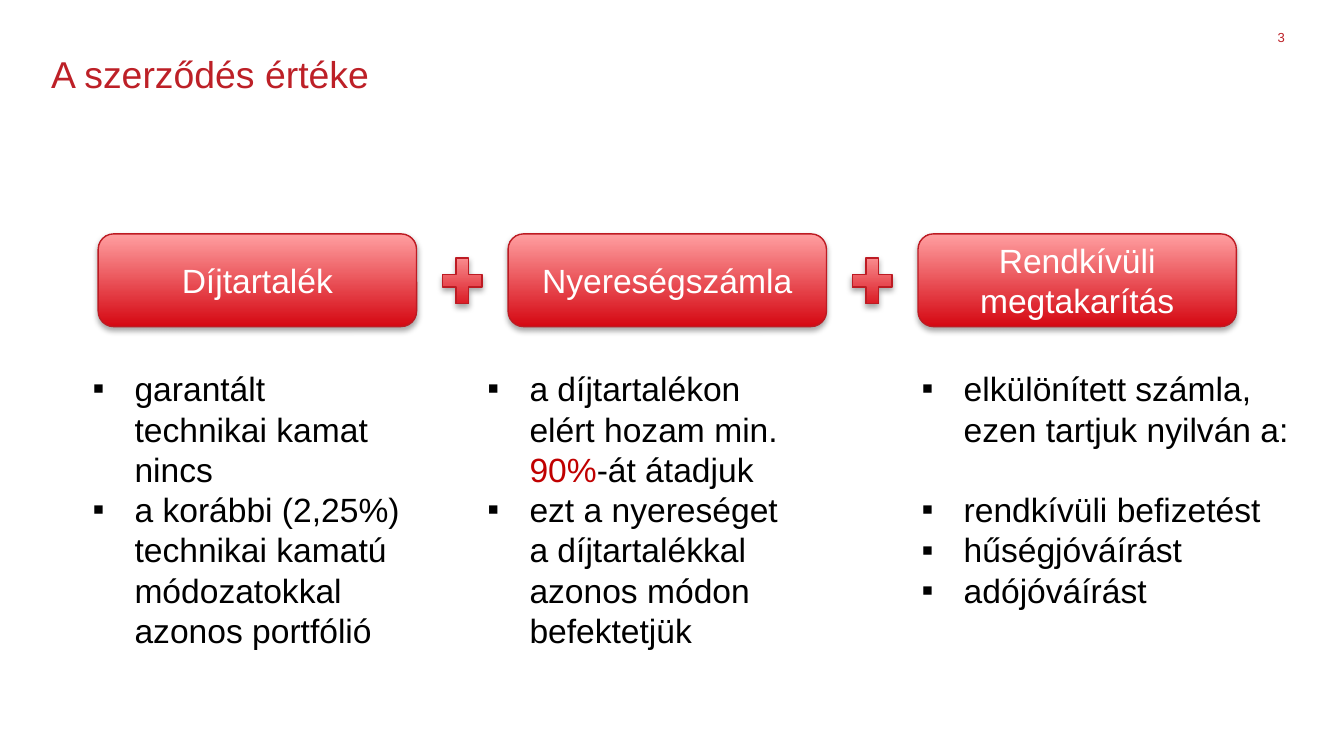
from dataclasses import dataclass

from lxml import etree
from pptx import Presentation
from pptx.dml.color import RGBColor
from pptx.enum import shapes, text
from pptx.oxml import ns
from pptx.util import Pt

COLORS = {
    "title": "BD2027",
    "border": "BD1B23",
    "deep": "D50812",
    "light": "FF9FA1",
    "accent": "C00000",
    "body": "000000",
    "label": "FFFFFF",
    "shadow": "000000",
}
FONT = "Arial"
PITCH = 219.6
INDENT = 22.5


@dataclass
class Box:
    left: float
    top: float
    width: float
    height: float


@dataclass
class Bullet:
    phrases: tuple[str, ...]
    gap: float = 0


@dataclass
class Component:
    name: str
    details: Box
    bullets: list[Bullet]


COMPONENTS = [
    Component("Díjtartalék", Box(42.5, 193.7, 180.7, 160), [
        Bullet(("garantált technikai kamat nincs",)),
        Bullet(("a korábbi (2,25%) technikai kamatú módozatokkal azonos portfólió",)),
    ]),
    Component("Nyereségszámla", Box(254.1, 193.7, 170.6, 160), [
        Bullet(("a díjtartalékon elért hozam min. ", "90%", "-át átadjuk")),
        Bullet(("ezt a nyereséget a díjtartalékkal azonos módon befektetjük",)),
    ]),
    Component("Rendkívüli megtakarítás", Box(486.7, 193.7, 220.3, 138.2), [
        Bullet(("elkülönített számla, ezen tartjuk nyilván a:",)),
        Bullet(("rendkívüli befizetést",), gap=21.5),
        Bullet(("hűségjóváírást",)),
        Bullet(("adójóváírást",)),
    ]),
]


def place(box: Box) -> tuple[Pt, Pt, Pt, Pt]:
    """Return a box as lengths in points."""
    return Pt(box.left), Pt(box.top), Pt(box.width), Pt(box.height)


def style_run(run, size: float, color: str) -> None:
    """Set the font of one run."""
    run.font.name = FONT
    run.font.size = Pt(size)
    run.font.color.rgb = RGBColor.from_string(COLORS[color])


def add_line(slide, box: Box, words: str, size: float, align) -> None:
    """Add a single line of text without margins."""
    line = slide.shapes.add_textbox(*place(box))
    frame = line.text_frame
    frame.margin_left = frame.margin_right = frame.margin_top = frame.margin_bottom = 0
    frame.word_wrap = True
    frame.text = words
    frame.paragraphs[0].alignment = align
    style_run(frame.paragraphs[0].runs[0], size, "title")


def add_glossy(slide, kind, box: Box, words: str = "") -> None:
    """Add a red gradient shape with a soft shadow and an optional label."""
    glossy = slide.shapes.add_shape(kind, *place(box))
    glossy.fill.gradient()
    glossy.fill.gradient_angle = 90
    for stop, color, position in zip(glossy.fill.gradient_stops, ("deep", "light"), (0, 1)):
        stop.color.rgb = RGBColor.from_string(COLORS[color])
        stop.position = position
    glossy.line.color.rgb = RGBColor.from_string(COLORS["border"])
    glossy.line.width = Pt(0.75)
    glossy.shadow.inherit = False
    effects = glossy.element.spPr.find(ns.qn("a:effectLst"))
    shadow = etree.SubElement(effects, ns.qn("a:outerShdw"), blurRad=str(Pt(3.1)),
                              dist=str(Pt(1.8)), dir="5400000", rotWithShape="0")
    tone = etree.SubElement(shadow, ns.qn("a:srgbClr"), val=COLORS["shadow"])
    etree.SubElement(tone, ns.qn("a:alpha"), val="35000")
    if words:
        frame = glossy.text_frame
        frame.word_wrap = True
        frame.vertical_anchor = text.MSO_ANCHOR.MIDDLE
        frame.text = words
        frame.paragraphs[0].alignment = text.PP_ALIGN.CENTER
        style_run(frame.paragraphs[0].runs[0], 18, "label")


def add_details(slide, box: Box, bullets: list[Bullet]) -> None:
    """Add a bulleted list whose every second phrase is accented."""
    frame = slide.shapes.add_textbox(*place(box)).text_frame
    frame.word_wrap = True
    for index, bullet in enumerate(bullets):
        paragraph = frame.add_paragraph() if index else frame.paragraphs[0]
        properties = paragraph._p.get_or_add_pPr()
        properties.set("marL", str(Pt(INDENT)))
        properties.set("indent", str(Pt(-INDENT)))
        etree.SubElement(properties, ns.qn("a:buFont"), typeface=FONT)
        etree.SubElement(properties, ns.qn("a:buChar"), char="▪")
        if bullet.gap:
            paragraph.space_before = Pt(bullet.gap)
        for order, phrase in enumerate(bullet.phrases):
            run = paragraph.add_run()
            run.text = phrase
            style_run(run, 18, "accent" if order % 2 else "body")


def main() -> None:
    """Build the contract value slide."""
    deck = Presentation()
    deck.slide_width, deck.slide_height = Pt(720), Pt(405)
    slide = deck.slides.add_slide(deck.slide_layouts[6])
    add_line(slide, Box(672.5, 15.8, 15.8, 10.8), "3", 7, text.PP_ALIGN.RIGHT)
    add_line(slide, Box(27.4, 27.4, 660.2, 36.7), "A szerződés értéke", 20, text.PP_ALIGN.LEFT)
    for column, component in enumerate(COMPONENTS):
        shift = column * PITCH
        add_glossy(slide, shapes.MSO_SHAPE.ROUNDED_RECTANGLE,
                   Box(52.6 + shift, 125.3, 170.6, 49.7), component.name)
        add_details(slide, component.details, component.bullets)
        if column < len(COMPONENTS) - 1:
            add_glossy(slide, shapes.MSO_SHAPE.MATH_PLUS,
                       Box(233.3 + shift, 133.9, 28.8, 33.1))
    deck.save("out.pptx")


if __name__ == "__main__":
    main()
